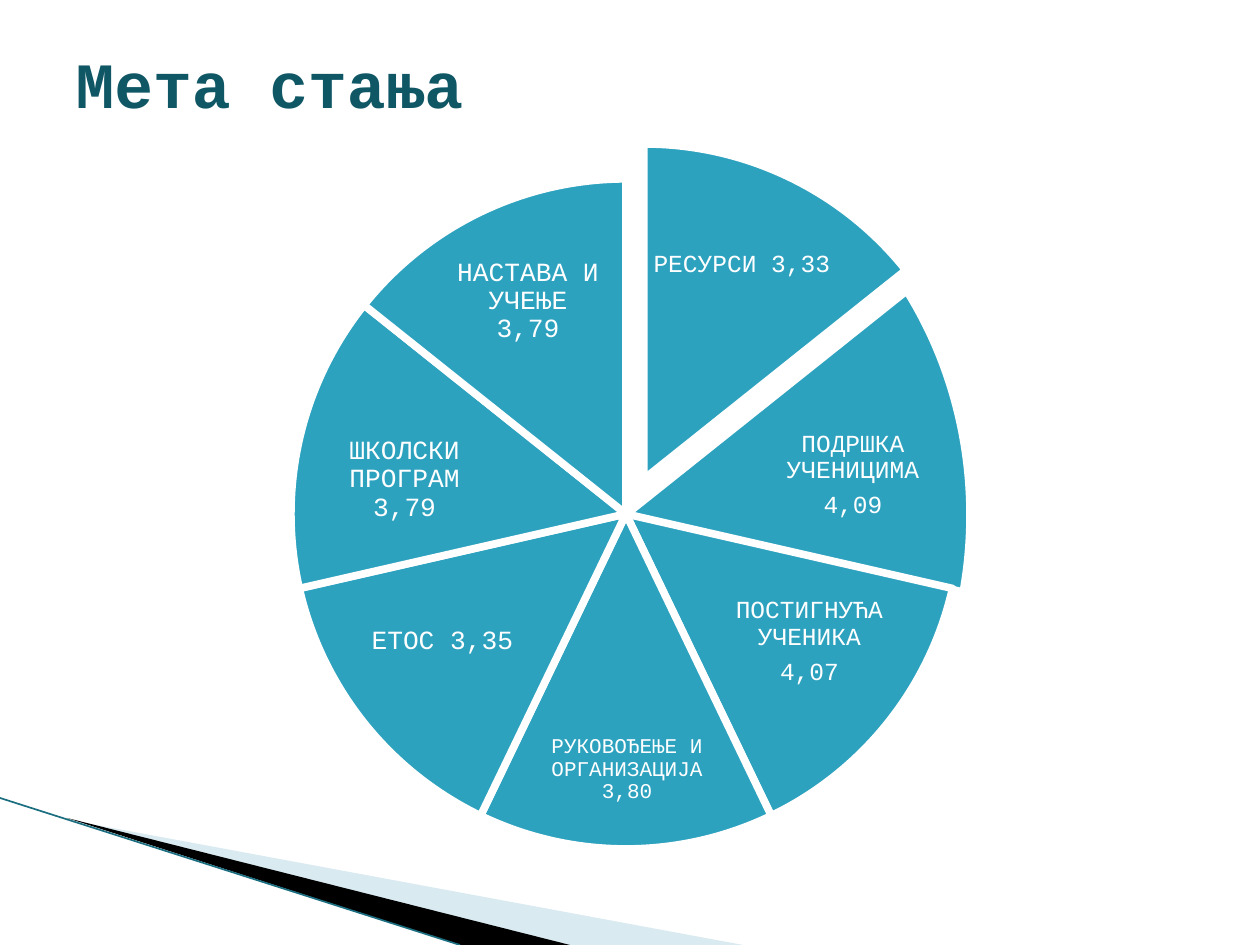
"""Build the slide with a seven-part wheel of school quality scores."""
import dataclasses
import typing

import lxml.etree
import pptx
import pptx.dml.color
import pptx.dml.fill
import pptx.enum.shapes
import pptx.enum.text
import pptx.oxml.ns
import pptx.shapes.autoshape
import pptx.shapes.shapetree
import pptx.slide
import pptx.util

SCALE = 914400 / 126
FONT = "Courier New"
TEAL = "2DA2BF"
WHITE = "FFFFFF"
STEP = 360 / 7
TOP = 270
RING = (291, 179, 670, 670)
Box = tuple[int, int, int, int]
Point = tuple[int, int]


@dataclasses.dataclass(frozen=True)
class Part:
    """One sector of the wheel and its label."""

    lines: tuple[str, ...]
    size: int
    label: Box
    pie: Box = RING


@dataclasses.dataclass(frozen=True)
class Wedge:
    """One filled triangle in the corner."""

    points: tuple[Point, ...]
    color: str
    alpha: int = 100


PARTS = (
    Part(("РЕСУРСИ 3,33",), 14, (650, 207, 184, 116), (309, 144, 670, 670)),
    Part(("ПОДРШКА УЧЕНИЦИМА", "4,09"), 14, (753, 403, 200, 144),
         (281, 127, 689, 776)),
    Part(("ПОСТИГНУЋА УЧЕНИКА", "4,07"), 14, (722, 578, 175, 127)),
    Part(("РУКОВОЂЕЊЕ И\vОРГАНИЗАЦИЈА\v3,80",), 12, (537, 706, 180, 127)),
    Part(("ЕТОС 3,35",), 15, (355, 578, 175, 127)),
    Part(("ШКОЛСКИ\vПРОГРАМ\v3,79",), 15, (307, 418, 195, 123)),
    Part(("НАСТАВА И\vУЧЕЊЕ\v3,79",), 15, (436, 243, 184, 116)),
)
WEDGES = (
    Wedge(((69, 820), (743, 945), (570, 945)), "A0CBDC", 40),
    Wedge(((67, 818), (570, 945), (460, 945)), "000000"),
)


def px(*sides: int) -> list[pptx.util.Emu]:
    """Turn pixels into EMU."""
    return [pptx.util.Emu(round(side * SCALE)) for side in sides]


def rgb(code: str) -> pptx.dml.color.RGBColor:
    """Turn a hex string into a colour."""
    return pptx.dml.color.RGBColor.from_string(code)


def paint(fill: pptx.dml.fill.FillFormat, code: str) -> None:
    """Set a solid fill."""
    fill.solid()
    fill.fore_color.rgb = rgb(code)


def draw_wedge(slide: pptx.slide.Slide, wedge: Wedge) -> None:
    """Draw one corner triangle."""
    pen = slide.shapes.build_freeform(*wedge.points[0], scale=SCALE)
    pen.add_line_segments(wedge.points[1:], close=True)
    shape = pen.convert_to_shape()
    shape.shadow.inherit = False
    paint(shape.fill, wedge.color)
    shape.line.fill.background()
    if wedge.alpha < 100:
        tone = shape._element.spPr.find(".//" + pptx.oxml.ns.qn("a:srgbClr"))
        alpha = lxml.etree.SubElement(tone, pptx.oxml.ns.qn("a:alpha"))
        alpha.set("val", str(wedge.alpha * 1000))


def draw_edge(slide: pptx.slide.Slide, start: Point, end: Point) -> None:
    """Draw the thin line along the corner."""
    kind = pptx.enum.shapes.MSO_CONNECTOR.STRAIGHT
    edge = slide.shapes.add_connector(kind, *px(*start, *end))
    edge.line.color.rgb = rgb("1B6E80")
    edge.line.width = pptx.util.Pt(0.95)
    lxml.etree.SubElement(edge._element.spPr, pptx.oxml.ns.qn("a:effectLst"))


def draw_pie(shapes: pptx.shapes.shapetree.GroupShapes, part: Part,
             index: int) -> None:
    """Draw one sector, clockwise from the top."""
    pie = shapes.add_shape(pptx.enum.shapes.MSO_SHAPE.PIE, *px(*part.pie))
    for side in range(2):
        angle = (TOP + (index + side) * STEP) % 360
        pie.adjustments[side] = angle * 60000 / 100000
    pie.shadow.inherit = False
    paint(pie.fill, TEAL)
    pie.line.color.rgb = rgb(WHITE)
    pie.line.width = pptx.util.Pt(4.33)


def draw_label(shapes: pptx.shapes.shapetree.GroupShapes, part: Part) -> None:
    """Write the name and score of one sector."""
    frame = shapes.add_textbox(*px(*part.label)).text_frame
    frame.word_wrap = True
    frame.vertical_anchor = pptx.enum.text.MSO_ANCHOR.MIDDLE
    inset, = px(2)
    frame.margin_left = frame.margin_right = inset
    frame.margin_top = frame.margin_bottom = inset
    frame.text = "\n".join(part.lines)
    for para in frame.paragraphs:
        para.alignment = pptx.enum.text.PP_ALIGN.CENTER
        para.line_spacing = 0.9
        para.space_after = pptx.util.Pt(round(part.size * 0.35))
        style(para.font, part.size, WHITE)


def style(font: typing.Any, size: float, code: str) -> None:
    """Set face, size and colour of a font."""
    font.name = FONT
    font.size = pptx.util.Pt(size)
    font.color.rgb = rgb(code)


def set_title(slide: pptx.slide.Slide, text: str) -> None:
    """Fill and place the title."""
    title = slide.shapes.title
    title.left, title.top, title.width, title.height = px(63, 38, 1134, 157)
    frame = title.text_frame
    frame.text = text
    frame.word_wrap = True
    frame.auto_size = pptx.enum.text.MSO_AUTO_SIZE.NONE
    frame.vertical_anchor = pptx.enum.text.MSO_ANCHOR.TOP
    para = frame.paragraphs[0]
    para.alignment = pptx.enum.text.PP_ALIGN.LEFT
    style(para.font, 36.9, "105766")
    para.font.bold = True


def main() -> None:
    """Build and save the slide."""
    deck = pptx.Presentation()
    deck.slide_width, deck.slide_height = px(1260, 945)
    slide = deck.slides.add_slide(deck.slide_layouts[5])
    for wedge in WEDGES:
        draw_wedge(slide, wedge)
    draw_edge(slide, (0, 798), (460, 945))
    wheel = slide.shapes.add_group_shape().shapes
    for index, part in enumerate(PARTS):
        draw_pie(wheel, part, index)
        draw_label(wheel, part)
    set_title(slide, "Мета стања")
    deck.save("out.pptx")


if __name__ == "__main__":
    main()
